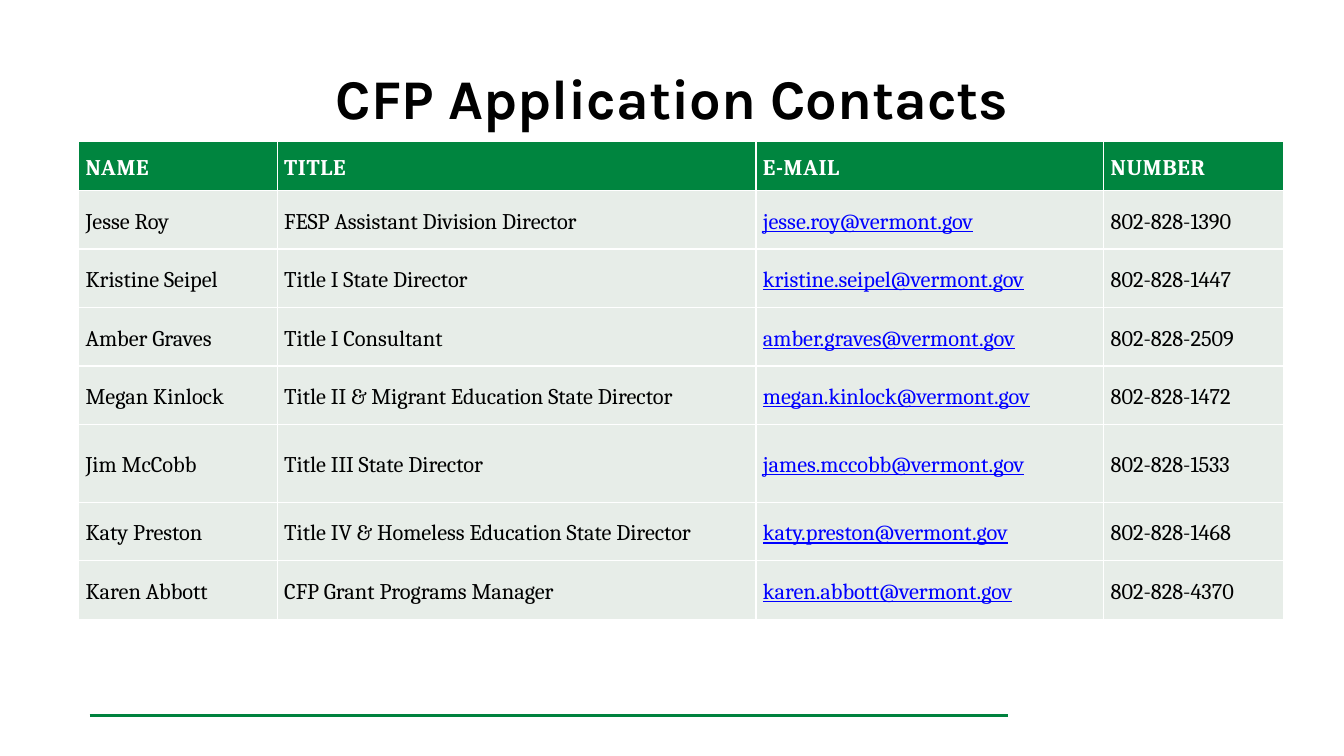
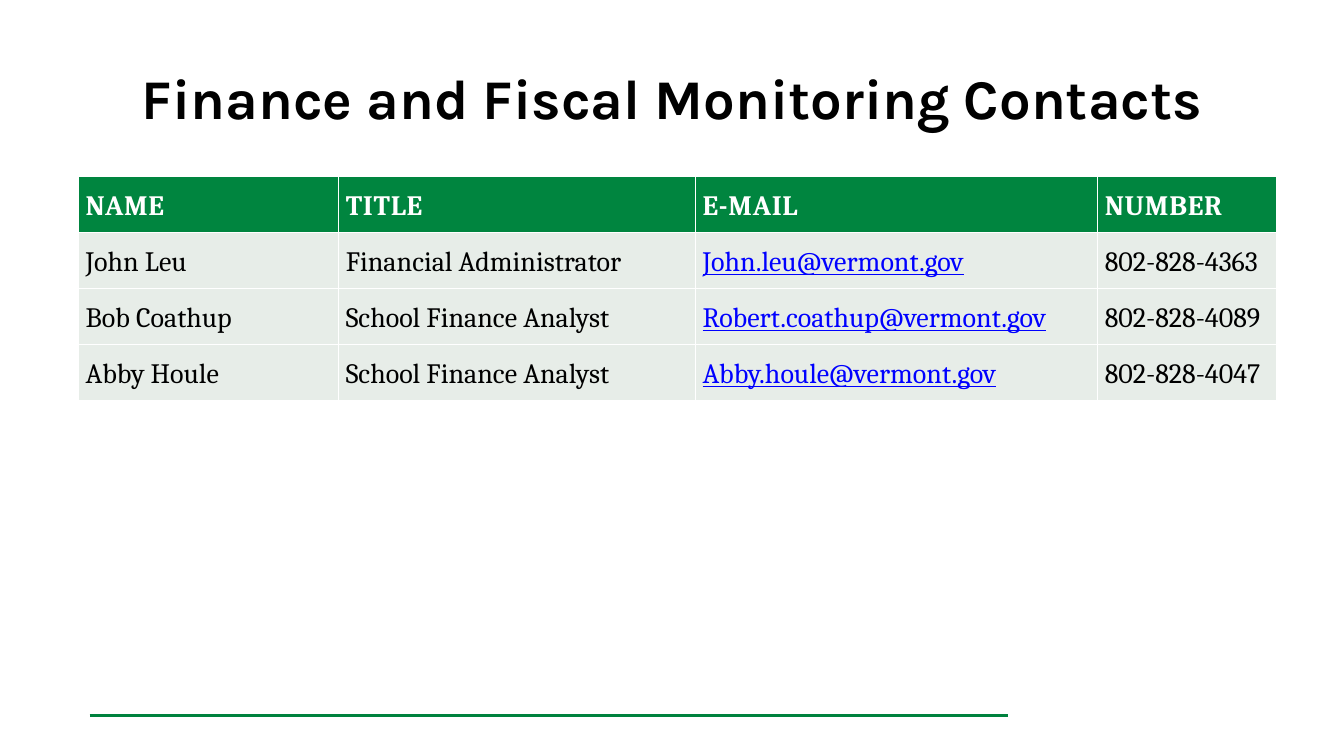
from dataclasses import dataclass

from pptx import Presentation
from pptx.dml.color import RGBColor
from pptx.enum.shapes import MSO_CONNECTOR
from pptx.enum.text import MSO_ANCHOR, PP_ALIGN
from pptx.oxml.ns import qn
from pptx.presentation import Presentation as Deck
from pptx.slide import Slide, SlideLayout
from pptx.table import _Cell as Cell
from pptx.util import Pt
from lxml.etree import SubElement


@dataclass(frozen=True)
class Theme:
    title_font: str = "Karla"
    table_font: str = "Cambria"
    title_size: float = 40
    rule: RGBColor = RGBColor(0x00, 0x82, 0x3E)
    header: RGBColor = RGBColor(0x00, 0x85, 0x3F)
    body: RGBColor = RGBColor(0xE7, 0xED, 0xE8)
    white: RGBColor = RGBColor(0xFF, 0xFF, 0xFF)
    black: RGBColor = RGBColor(0x00, 0x00, 0x00)
    link: RGBColor = RGBColor(0x00, 0x00, 0xFF)


@dataclass(frozen=True)
class Contact:
    name: str
    title: str
    email: str
    number: str
    height: float

    def texts(self) -> tuple[str, ...]:
        return self.name, self.title, self.email, self.number


@dataclass(frozen=True)
class ContactSlide:
    title: str
    top: float
    text_size: float
    header_height: float
    widths: tuple[float, ...]
    contacts: tuple[Contact, ...]


THEME = Theme()
HEADERS = ("NAME", "TITLE", "E-MAIL", "NUMBER")
EMAIL_COL = HEADERS.index("E-MAIL")
TABLE_LEFT = 56.2
ROW, TALL_ROW, FISCAL_ROW = 41.8, 55.6, 40

SLIDES = (
    ContactSlide(
        "CFP Application Contacts", 100.8, 16, 35.3, (141.8, 342, 248.4, 128.2),
        (
            Contact("Jesse Roy", "FESP Assistant Division Director",
                    "jesse.roy@vermont.gov", "802-828-1390", ROW),
            Contact("Kristine Seipel", "Title I State Director",
                    "kristine.seipel@vermont.gov", "802-828-1447", ROW),
            Contact("Amber Graves", "Title I Consultant",
                    "amber.graves@vermont.gov", "802-828-2509", ROW),
            Contact("Megan Kinlock", "Title II & Migrant Education State Director",
                    "megan.kinlock@vermont.gov", "802-828-1472", ROW),
            Contact("Jim McCobb", "Title III State Director",
                    "james.mccobb@vermont.gov", "802-828-1533", TALL_ROW),
            Contact("Katy Preston", "Title IV & Homeless Education State Director",
                    "katy.preston@vermont.gov", "802-828-1468", ROW),
            Contact("Karen Abbott", "CFP Grant Programs Manager",
                    "karen.abbott@vermont.gov", "802-828-4370", ROW),
        ),
    ),
    ContactSlide(
        "Finance and Fiscal Monitoring Contacts", 126, 20, FISCAL_ROW,
        (185.8, 254.9, 287.3, 127.8),
        (
            Contact("John Leu", "Financial Administrator",
                    "John.leu@vermont.gov", "802-828-4363", FISCAL_ROW),
            Contact("Bob Coathup", "School Finance Analyst",
                    "Robert.coathup@vermont.gov", "802-828-4089", FISCAL_ROW),
            Contact("Abby Houle", "School Finance Analyst",
                    "Abby.houle@vermont.gov", "802-828-4047", FISCAL_ROW),
        ),
    ),
)


def style_layout(layout: SlideLayout, slide: Slide) -> None:
    """Place the title and move a footer rule, drawn on slide, to the layout."""
    title = layout.placeholders[0]
    title.left, title.top, title.width, title.height = Pt(48), Pt(24), Pt(864), Pt(90)
    rule = slide.shapes.add_connector(
        MSO_CONNECTOR.STRAIGHT, Pt(64), Pt(511), Pt(720), Pt(511))
    rule.line.color.rgb = THEME.rule
    rule.line.width = Pt(2.25)
    SubElement(rule.element.spPr, qn("a:effectLst"))
    layout.shapes.element.append(rule.element)


def add_title(slide: Slide, text: str) -> None:
    tf = slide.shapes.title.text_frame
    tf.vertical_anchor = MSO_ANCHOR.MIDDLE
    p = tf.paragraphs[0]
    p.alignment = PP_ALIGN.CENTER
    r = p.add_run()
    r.text = text
    r.font.name, r.font.size, r.font.bold = THEME.title_font, Pt(THEME.title_size), True
    r.font.color.rgb = THEME.black


def fill_cell(cell: Cell, text: str, size: float, is_header: bool, is_link: bool) -> None:
    cell.fill.solid()
    cell.fill.fore_color.rgb = THEME.header if is_header else THEME.body
    cell.vertical_anchor = MSO_ANCHOR.MIDDLE
    cell.margin_left = cell.margin_right = Pt(5)
    cell.margin_top = cell.margin_bottom = Pt(0)
    p = cell.text_frame.paragraphs[0]
    p.line_spacing = 1.15
    r = p.add_run()
    r.text = text
    r.font.name, r.font.size, r.font.bold = THEME.table_font, Pt(size), is_header
    if is_header:
        r.font.color.rgb = THEME.white
        r._r.get_or_add_rPr().set("spc", "50")
    else:
        r.font.color.rgb = THEME.link if is_link else THEME.black
        r.font.underline = is_link


def add_contact_table(slide: Slide, content: ContactSlide) -> None:
    rows = (HEADERS, *(c.texts() for c in content.contacts))
    heights = (content.header_height, *(c.height for c in content.contacts))
    table = slide.shapes.add_table(
        len(rows), len(HEADERS), Pt(TABLE_LEFT), Pt(content.top),
        Pt(sum(content.widths)), Pt(sum(heights))).table
    table.horz_banding = False
    for column, width in zip(table.columns, content.widths):
        column.width = Pt(width)
    for i, (texts, height) in enumerate(zip(rows, heights)):
        table.rows[i].height = Pt(height)
        for j, text in enumerate(texts):
            is_header = i == 0
            fill_cell(table.cell(i, j), text, content.text_size, is_header,
                      not is_header and j == EMAIL_COL)


def build() -> Deck:
    prs = Presentation()
    prs.slide_width, prs.slide_height = Pt(960), Pt(540)
    layout = prs.slide_layouts.get_by_name("Title Only")
    for i, content in enumerate(SLIDES):
        slide = prs.slides.add_slide(layout)
        if i == 0:
            style_layout(layout, slide)
        add_title(slide, content.title)
        add_contact_table(slide, content)
    return prs


if __name__ == "__main__":
    build().save("out.pptx")
